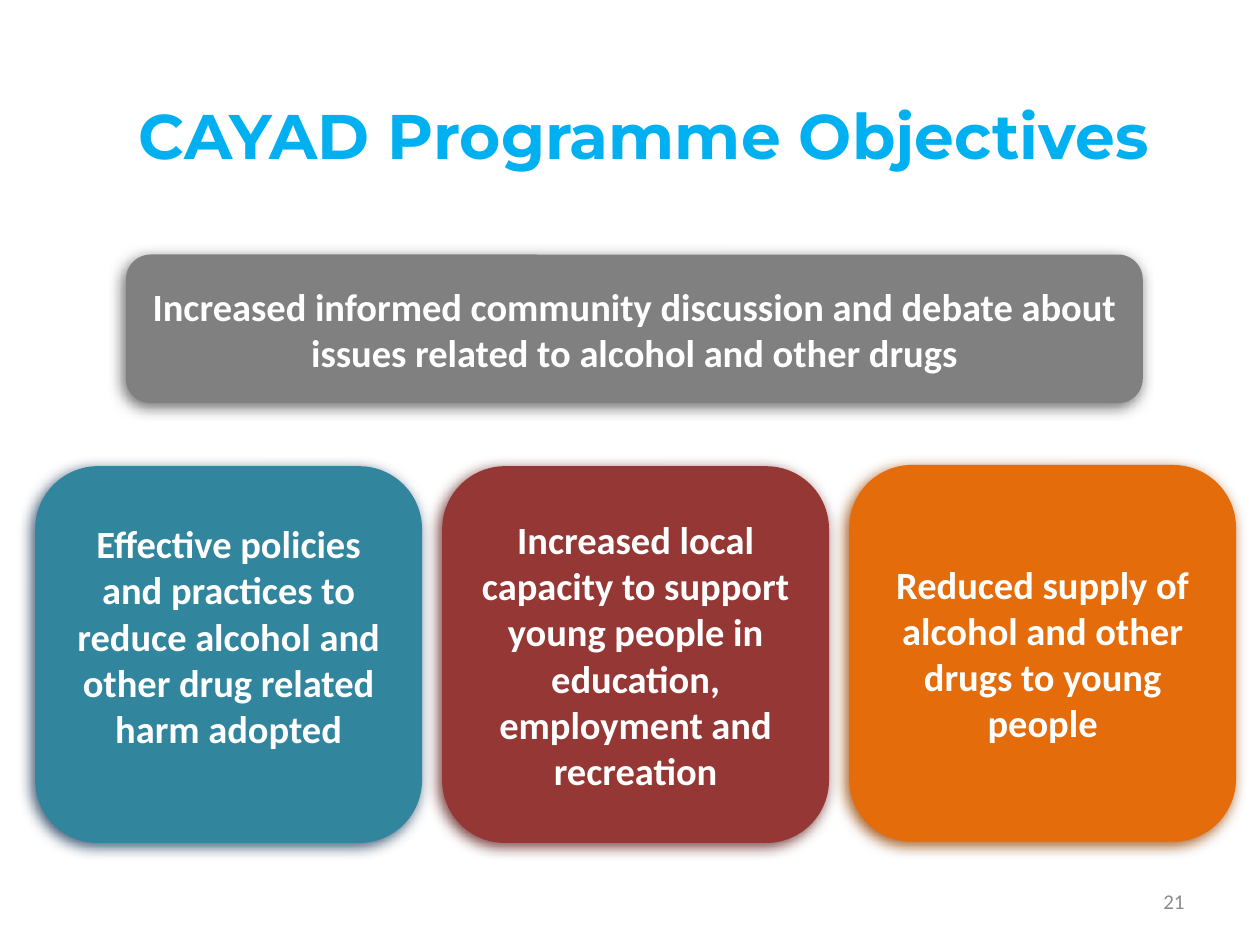
from lxml import etree
from pptx import Presentation
from pptx.dml.color import RGBColor
from pptx.enum.shapes import MSO_SHAPE
from pptx.enum.text import MSO_ANCHOR, PP_ALIGN
from pptx.oxml.ns import qn
from pptx.util import Inches, Pt

ROUNDED = MSO_SHAPE.ROUNDED_RECTANGLE
MIDDLE = MSO_ANCHOR.MIDDLE
CENTER, RIGHT = PP_ALIGN.CENTER, PP_ALIGN.RIGHT

WHITE = RGBColor(0xFF, 0xFF, 0xFF)
SKY = RGBColor(0x00, 0xB0, 0xF0)
NUMBER_GRAY = RGBColor(0x8C, 0x8C, 0x8C)
GRAY, DARK_GRAY = RGBColor(0x80, 0x80, 0x80), RGBColor(0x59, 0x59, 0x59)
TEAL, NAVY = RGBColor(0x31, 0x85, 0x9C), RGBColor(0x25, 0x40, 0x61)
RED, DARK_RED = RGBColor(0x95, 0x37, 0x35), RGBColor(0x63, 0x25, 0x23)
ORANGE, BROWN = RGBColor(0xE4, 0x6C, 0x0A), RGBColor(0x98, 0x48, 0x07)


def write(shape, text, size, color, font="Calibri", bold=True, align=CENTER):
    tf = shape.text_frame
    tf.word_wrap = True
    tf.vertical_anchor = MIDDLE
    p = tf.paragraphs[0]
    p.alignment = align
    r = p.add_run()
    r.text = text
    r.font.name = font
    r.font.size = Pt(size)
    r.font.bold = bold
    r.font.color.rgb = color


def add_shadow(shape, color):
    """Give the shape a soft shadow towards the lower left."""
    shape.shadow.inherit = False
    effects = shape._element.spPr.find(qn("a:effectLst"))
    shadow = etree.SubElement(
        effects, qn("a:outerShdw"), blurRad=str(Pt(8)), dist=str(Pt(3)),
        dir=str(135 * 60000), algn="tr", rotWithShape="0")
    rgb = etree.SubElement(shadow, qn("a:srgbClr"), val=str(color))
    etree.SubElement(rgb, qn("a:alpha"), val="85000")


prs = Presentation()
prs.slide_width, prs.slide_height = Inches(10), Inches(7.5)
s = prs.slides.add_slide(prs.slide_layouts[5])

title = s.shapes.title
title.left, title.top = Inches(0.61), Inches(0.44)
title.width, title.height = Inches(9), Inches(1.25)
write(title, "CAYAD Programme Objectives", 36, SKY, font="Montserrat")

number = s.shapes.add_textbox(Inches(7.17), Inches(6.95), Inches(2.33), Inches(0.4))
write(number, "21", 12, NUMBER_GRAY, bold=False, align=RIGHT)

# Left, top, width, height, bottom inset, fill, shadow, text
CARD_W, CARD_H, CARD_LEFT, CARD_STEP = 3.07, 2.99, 0.28, 3.23
objectives = [
    (CARD_LEFT, 3.7, CARD_W, CARD_H, 0.35, TEAL, NAVY,
     "Effective policies and practices to reduce alcohol and other drug "
     "related harm adopted"),
    (CARD_LEFT + CARD_STEP, 3.7, CARD_W, CARD_H, 0.05, RED, DARK_RED,
     "Increased local capacity to support young people in education, "
     "employment and recreation"),
    (CARD_LEFT + 2 * CARD_STEP, 3.69, CARD_W, CARD_H, 0.05, ORANGE, BROWN,
     "Reduced supply of alcohol and other drugs to young people"),
    (1, 2.02, 8.07, 1.18, 0.05, GRAY, DARK_GRAY,
     "Increased informed community discussion and debate about issues "
     "related to alcohol and other drugs"),
]
for left, top, width, height, inset, fill, shade, text in objectives:
    sp = s.shapes.add_shape(
        ROUNDED, Inches(left), Inches(top), Inches(width), Inches(height))
    sp.fill.solid()
    sp.fill.fore_color.rgb = fill
    sp.line.fill.background()
    add_shadow(sp, shade)
    write(sp, text, 22, WHITE)
    sp.text_frame.margin_bottom = Inches(inset)

prs.save("out.pptx")
